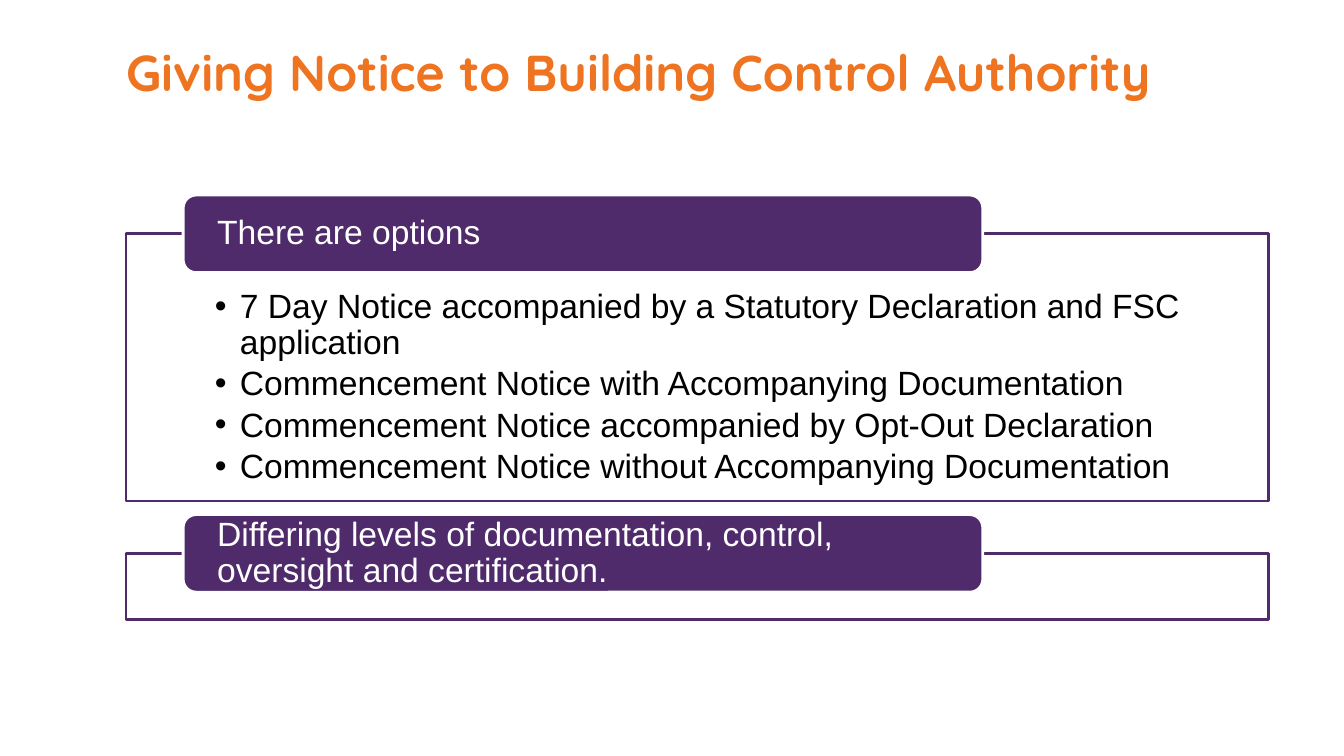
import pptx
import pptx.dml.color
import pptx.enum.shapes
import pptx.enum.text
import pptx.util
from lxml import etree

inch = pptx.util.Inches
anchors = pptx.enum.text.MSO_ANCHOR
kinds = pptx.enum.shapes.MSO_SHAPE
PURPLE, WHITE, ORANGE, BLACK = "4F2B6B", "FFFFFF", "EE7421", "000000"
LEFT, WIDTH = 1.25, 11.33
TAB_H = 0.77


def paint(shape, fill, line):
    for part, color in ((shape.fill, fill), (shape.line.fill, line)):
        part.solid()
        part.fore_color.rgb = pptx.dml.color.RGBColor.from_string(color)
    shape.line.width = pptx.util.Pt(2)


def write(shape, text, size=24, font="Arial", color=BLACK, bold=False,
          anchor=anchors.MIDDLE, pad=(0, 0, 0, 0), lines=0.9, after=0, bullet=False):
    """Fill a shape with one paragraph per line; pad is left, top, right, bottom."""
    frame = shape.text_frame
    frame.word_wrap = True
    frame.auto_size = pptx.enum.text.MSO_AUTO_SIZE.NONE
    frame.vertical_anchor = anchor
    (frame.margin_left, frame.margin_top,
     frame.margin_right, frame.margin_bottom) = map(inch, pad)
    frame.text = text
    for para in frame.paragraphs:
        para.alignment = pptx.enum.text.PP_ALIGN.LEFT
        para.line_spacing = lines
        para.space_before = pptx.util.Pt(0)
        para.space_after = pptx.util.Pt(after)
        if bullet:
            props = para._p.get_or_add_pPr()
            props.set("marL", str(inch(0.25)))
            props.set("indent", str(-inch(0.25)))
            mark = etree.SubElement(props, pptx.oxml.ns.qn("a:buChar"))
            mark.set("char", "•")
        style = para.runs[0].font
        style.size = pptx.util.Pt(size)
        style.name = font
        style.bold = bold
        style.color.rgb = pptx.dml.color.RGBColor.from_string(color)


deck = pptx.Presentation()
deck.slide_width, deck.slide_height = inch(13.33), inch(7.5)
slide = deck.slides.add_slide(deck.slide_layouts[1])
shapes = slide.shapes

title = shapes.title
title.left, title.top, title.width, title.height = map(inch, (LEFT, 0, 11.31, 1.42))
write(title, "Giving Notice to Building Control Authority",
      size=36, font="Quicksand", color=ORANGE, bold=True, lines=1)

options = slide.placeholders[1]
write(options, "\n".join([
    "7 Day Notice accompanied by a Statutory Declaration and FSC application",
    "Commencement Notice with Accompanying Documentation",
    "Commencement Notice accompanied by Opt-Out Declaration",
    "Commencement Notice without Accompanying Documentation",
]), anchor=anchors.TOP, pad=(0.88, 0.55, 0.88, 0.19), after=3.6, bullet=True)

levels = shapes.add_shape(kinds.RECTANGLE, 0, 0, 0, 0)
levels.shadow.inherit = False

sections = [
    (options, 2.32, 2.65, "There are options"),
    (levels, 5.49, 0.66,
     "Differing levels of documentation, control, oversight and certification."),
]
for box, top, height, head in sections:
    box.left, box.top, box.width, box.height = map(inch, (LEFT, top, WIDTH, height))
    paint(box, WHITE, PURPLE)
    tab = shapes.add_shape(kinds.ROUNDED_RECTANGLE, inch(LEFT + WIDTH * 0.05),
                           inch(top - TAB_H / 2), inch(WIDTH * 0.7), inch(TAB_H))
    tab.shadow.inherit = False
    paint(tab, PURPLE, WHITE)
    write(tab, head, color=WHITE, pad=(0.3, 0, 0.3, 0))

deck.save("out.pptx")
